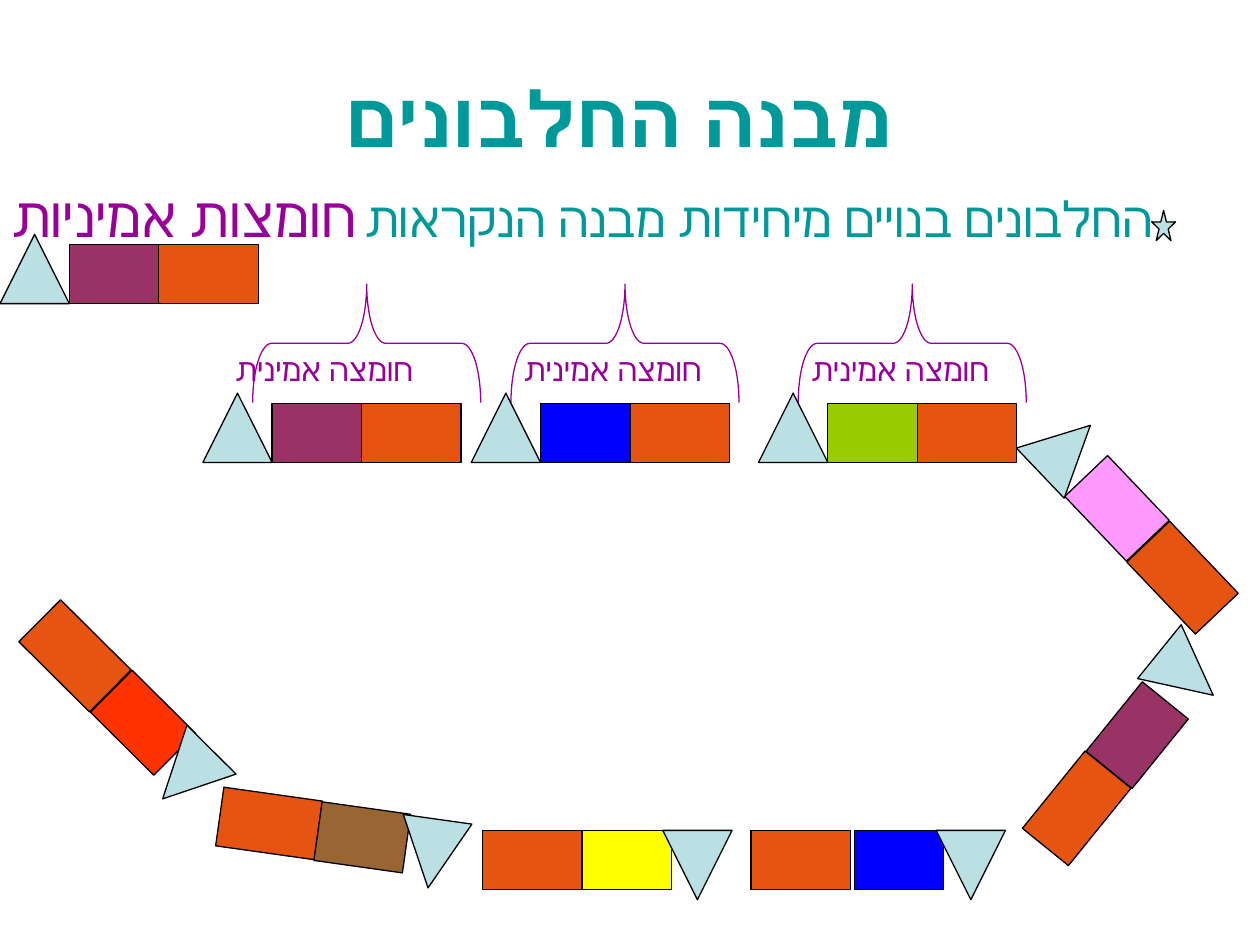
from pptx import Presentation
from pptx import util as u
from pptx.dml.color import RGBColor
from pptx.enum import lang, shapes, text

SHAPE = shapes.MSO_SHAPE
TEAL, PURPLE, BLACK = "009999", "990099", "000000"
ORANGE, PALE_BLUE, PLUM, BLUE = "E65412", "BBE0E3", "993366", "0000FF"


def rgb(value):
    return RGBColor.from_string(value)


class Deck:
    font = "Arial"
    line_width = u.Pt(0.75)
    base_size, side_size, amine_size = (0.79, 0.47), (0.71, 0.47), (0.55, 0.55)

    def __init__(self):
        self.prs = Presentation()
        self.prs.slide_width, self.prs.slide_height = u.Inches(10), u.Inches(7.5)
        self.s = self.prs.slides.add_slide(self.prs.slide_layouts[5])

    def style(self, r, size, color, bold=False):
        r.font.size, r.font.name, r.font.bold = u.Pt(size), self.font, bold
        r.font.color.rgb = rgb(color)
        r.font.language_id = lang.MSO_LANGUAGE_ID.HEBREW

    def title(self, words, x, y, w, h):
        sp = self.s.shapes.title
        sp.left, sp.top, sp.width, sp.height = map(u.Inches, (x, y, w, h))
        tf = sp.text_frame
        tf.text = words
        tf.vertical_anchor = text.MSO_ANCHOR.MIDDLE
        p = tf.paragraphs[0]
        p.alignment = text.PP_ALIGN.CENTER
        self.style(p.runs[0], 44, TEAL, bold=True)

    def text(self, parts, x, y, w, h, wrap=True):
        """Add a text box; parts are (words, size, colour)."""
        sp = self.s.shapes.add_textbox(*map(u.Inches, (x, y, w, h)))
        tf = sp.text_frame
        tf.word_wrap = wrap
        tf.auto_size = text.MSO_AUTO_SIZE.SHAPE_TO_FIT_TEXT
        p = tf.paragraphs[0]
        p.alignment = text.PP_ALIGN.LEFT
        for words, size, color in parts:
            r = p.add_run()
            r.text = words
            self.style(r, size, color)

    def shape(self, kind, place, size, fill=None, line=BLACK, rot=0, parent=None):
        parent = parent or self.s
        sp = parent.shapes.add_shape(kind, *map(u.Inches, (*place, *size)))
        sp.shadow.inherit = False
        sp.rotation = rot
        if fill:
            sp.fill.solid()
            sp.fill.fore_color.rgb = rgb(fill)
        else:
            sp.fill.background()
        sp.line.color.rgb = rgb(line)
        sp.line.width = self.line_width
        return sp

    def brace(self, x, y):
        sp = self.shape(SHAPE.LEFT_BRACE, (x, y), (0.94, 1.81), line=PURPLE, rot=90)
        sp.adjustments[0], sp.adjustments[1] = 0.16, 0.5

    def amino_acid(self, side_color, base, side, amine, rot=0):
        """Group a base block, a coloured side block and a triangle."""
        group = self.s.shapes.add_group_shape()
        for kind, place, size, fill in (
            (SHAPE.RECTANGLE, base, self.base_size, ORANGE),
            (SHAPE.RECTANGLE, side, self.side_size, side_color),
            (SHAPE.ISOSCELES_TRIANGLE, amine, self.amine_size, PALE_BLUE),
        ):
            self.shape(kind, place, size, fill, rot=rot, parent=group)

    def level_acid(self, side_color, x, y):
        """Place an unturned amino acid with its triangle's corner at x, y."""
        self.amino_acid(side_color, (x + 1.26, y + 0.08), (x + 0.55, y + 0.08), (x, y))


def main():
    deck = Deck()
    deck.title("מבנה החלבונים ", 0.5, 0.3, 9, 1.25)

    for x in (2.44, 4.49, 6.77):
        deck.brace(x, 1.82)
    for x, w, wrap in ((1.77, 1.81, True), (4.06, 1.65, False), (6.34, 1.65, False)):
        deck.text([("חומצה אמינית", 18, PURPLE)], x, 2.73, w, 0.4, wrap)
    deck.text(
        [
            ("החלבונים בנויים מיחידות מבנה הנקראות", 28, TEAL),
            (" ", 20, BLACK),
            ("חומצות אמיניות", 32, PURPLE),
        ],
        0, 1.39, 9.65, 0.63,
    )

    for color, x, y in (
        (BLUE, 3.74, 3.12),
        (PLUM, 1.61, 3.12),
        ("99CC00", 6.02, 3.12),
        (PLUM, 0, 1.86),
    ):
        deck.level_acid(color, x, y)

    turned_acids = (
        ("FF3300", (0.2, 4.97), (0.78, 5.5), (1.21, 5.87), 224.8),
        ("FF99FF", (8.99, 4.35), (8.51, 3.8), (8.18, 3.29), 46.4),
        ("FFFF00", (3.83, 6.59), (4.62, 6.59), (5.26, 6.59), 180),
        ("996633", (1.74, 6.3), (2.52, 6.41), (3.16, 6.5), 188),
        (PLUM, (8.15, 6.18), (8.67, 5.6), (9.14, 5.07), 129),
        (BLUE, (5.96, 6.59), (6.78, 6.59), (7.43, 6.59), 180),
    )
    for acid in turned_acids:
        deck.amino_acid(*acid)

    deck.shape(SHAPE.STAR_5_POINT, (9.14, 1.67), (0.19, 0.24), PALE_BLUE)
    deck.prs.save("out.pptx")


if __name__ == "__main__":
    main()
